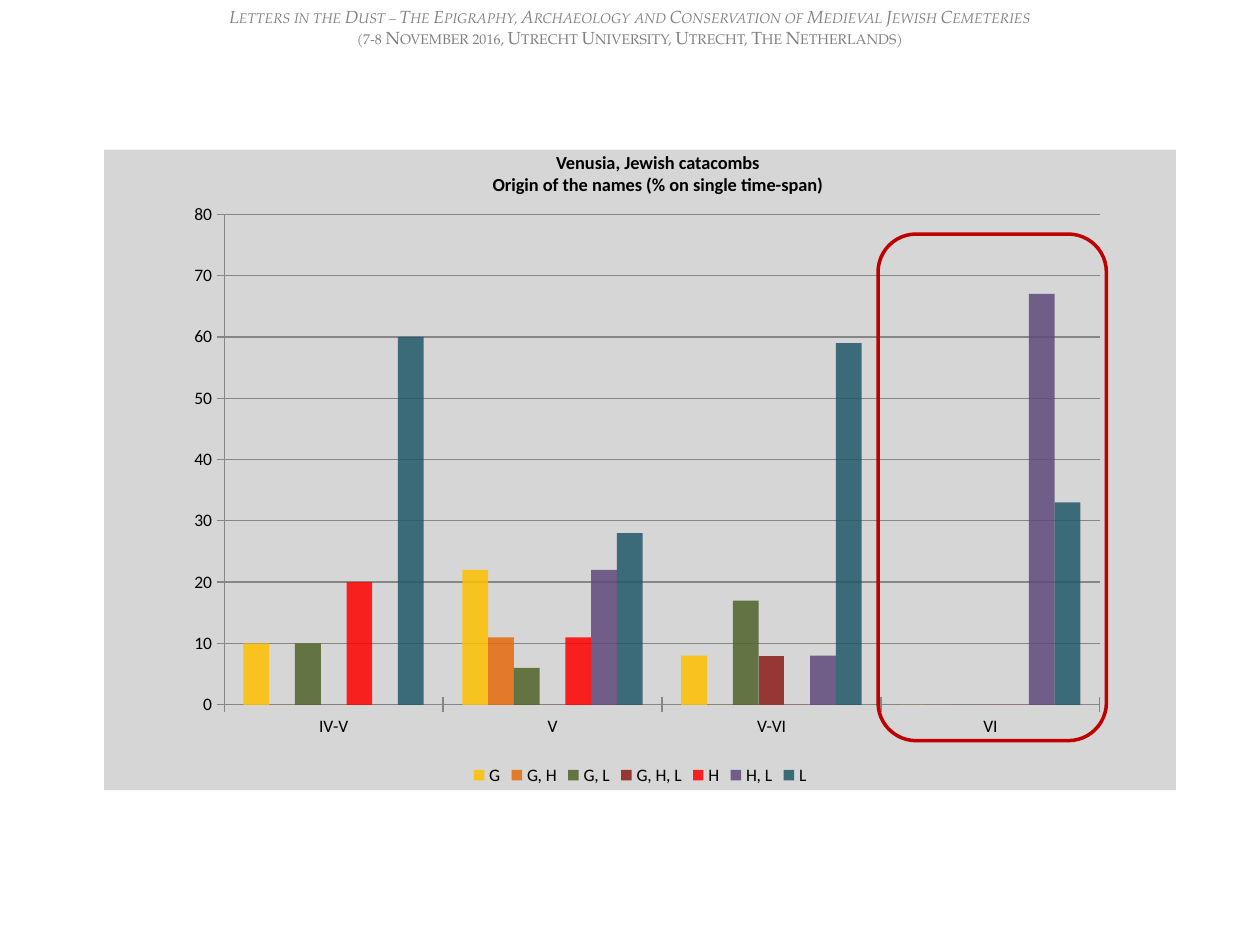
from lxml.etree import SubElement
from pptx import Presentation
from pptx.chart.data import CategoryChartData
from pptx.dml.color import RGBColor
from pptx.enum.chart import XL_CHART_TYPE, XL_LEGEND_POSITION, XL_TICK_MARK
from pptx.enum.shapes import MSO_SHAPE
from pptx.enum.text import MSO_AUTO_SIZE, PP_ALIGN
from pptx.oxml import parse_xml
from pptx.oxml.ns import nsdecls, qn
from pptx.util import Pt

# Content
HEADER = [
    ("Letters in the Dust – The Epigraphy, Archaeology and Conservation of "
     "Medieval Jewish Cemeteries", True),
    ("(7-8 November 2016, Utrecht University, Utrecht, The Netherlands)", False),
]
TITLE = [
    ("Venusia, Jewish catacombs", False),
    ("Origin of the names (% on single time-span)", False),
]
SPANS = ["IV-V", "V", "V-VI", "VI"]
ORIGINS = [  # name, values, opacity in percent
    ("G", (10, 22, 8, 0), 85),
    ("G, H", (0, 11, 0, 0), 85),
    ("G, L", (10, 6, 17, 0), 85),
    ("G, H, L", (0, 0, 8, 0), 100),
    ("H", (20, 11, 0, 0), 85),
    ("H, L", (0, 22, 8, 67), 85),
    ("L", (60, 28, 59, 33), 85),
]
COLORS = {
    "G": "FFC000", "G, H": "E46C0A", "G, L": "4F6228", "G, H, L": "953735",
    "H": "FF0000", "H, L": "604A7B", "L": "215968",
    "header": "808080", "text": "000000", "panel": "A6A6A6",
    "grid": "868686", "frame": "C00000",
}

# Places: left, top, width, height in points
BOXES = {
    "header": (0, 0, 720, 31.5),
    "chart": (59.5, 85.5, 612.5, 366),
    "title": (196, 83, 360, 34),
    "frame": (501.75, 133.75, 130.5, 289.5),
}
PLOT = {"x": 0.112, "y": 0.101, "w": 0.817, "h": 0.766}

# Formats
HEAD_FONT = {"name": "TeX Gyre Pagella", "size": Pt(10)}
TITLE_FONT = {"name": "Calibri", "size": Pt(10.5), "bold": True}
CHART_FONT = {"name": "Calibri", "size": Pt(10)}


def rgb(key):
    return RGBColor.from_string(COLORS[key])


def place(key):
    return [Pt(n) for n in BOXES[key]]


def style(font, look, color):
    for name, value in look.items():
        setattr(font, name, value)
    font.color.rgb = rgb(color)


def add_text(slide, key, lines, look, color, caps=False):
    frame = slide.shapes.add_textbox(*place(key)).text_frame
    frame.word_wrap = True
    frame.auto_size = MSO_AUTO_SIZE.SHAPE_TO_FIT_TEXT
    for i, (text, italic) in enumerate(lines):
        para = frame.add_paragraph() if i else frame.paragraphs[0]
        para.alignment = PP_ALIGN.CENTER
        run = para.add_run()
        run.text = text
        style(run.font, {**look, "italic": italic}, color)
        if caps:
            run.font._element.set("cap", "small")


def fade(fill, percent):
    color = fill._xPr.find(qn("a:solidFill"))[0]
    SubElement(color, qn("a:alpha"), val=str(percent * 1000))


def set_panel(chart, percent):
    panel = parse_xml(
        f'<c:spPr {nsdecls("c", "a")}><a:solidFill>'
        f'<a:srgbClr val="{COLORS["panel"]}"><a:alpha val="{percent * 1000}"/>'
        '</a:srgbClr></a:solidFill><a:ln><a:noFill/></a:ln></c:spPr>')
    chart._chartSpace.find(qn("c:chart")).addnext(panel)


def set_plot(chart):
    area = chart._chartSpace.find(qn("c:chart")).find(qn("c:plotArea"))
    for old in area.findall(qn("c:layout")):
        area.remove(old)
    modes = '<c:layoutTarget val="inner"/><c:xMode val="edge"/><c:yMode val="edge"/>'
    sizes = "".join(f'<c:{k} val="{v}"/>' for k, v in PLOT.items())
    area.insert(0, parse_xml(
        f'<c:layout {nsdecls("c")}><c:manualLayout>{modes}{sizes}'
        '</c:manualLayout></c:layout>'))


def add_bars(slide):
    data = CategoryChartData()
    data.categories = SPANS
    for name, values, _ in ORIGINS:
        data.add_series(name, values)
    chart = slide.shapes.add_chart(
        XL_CHART_TYPE.COLUMN_CLUSTERED, *place("chart"), data).chart
    chart.has_title = False
    style(chart.font, CHART_FONT, "text")
    set_panel(chart, 46)
    set_plot(chart)

    # Bars
    plot = chart.plots[0]
    plot.gap_width, plot.overlap, plot.vary_by_categories = 150, 0, False
    for bars, (name, _, percent) in zip(plot.series, ORIGINS):
        bars.invert_if_negative = False
        fill = bars.format.fill
        fill.solid()
        fill.fore_color.rgb = rgb(name)
        if percent < 100:
            fade(fill, percent)

    # Axes and grid
    scale = chart.value_axis
    scale.minimum_scale, scale.maximum_scale, scale.major_unit = 0, 80, 10
    scale.has_major_gridlines = True
    for axis in (chart.category_axis, scale):
        axis.major_tick_mark = XL_TICK_MARK.CROSS
        axis.minor_tick_mark = XL_TICK_MARK.NONE
    for part in (chart.category_axis, scale, scale.major_gridlines):
        part.format.line.color.rgb = rgb("grid")
        part.format.line.width = Pt(0.75)

    # Legend
    chart.has_legend = True
    chart.legend.position = XL_LEGEND_POSITION.BOTTOM
    chart.legend.include_in_layout = False


def add_frame(slide):
    shape = slide.shapes.add_shape(MSO_SHAPE.ROUNDED_RECTANGLE, *place("frame"))
    shape.shadow.inherit = False
    shape.fill.background()
    shape.line.color.rgb = rgb("frame")
    shape.line.width = Pt(2)


def main():
    deck = Presentation()
    deck.slide_width, deck.slide_height = Pt(720), Pt(540)
    slide = deck.slides.add_slide(deck.slide_layouts[6])
    add_text(slide, "header", HEADER, HEAD_FONT, "header", caps=True)
    add_bars(slide)
    add_text(slide, "title", TITLE, TITLE_FONT, "text")
    add_frame(slide)
    deck.save("out.pptx")


if __name__ == "__main__":
    main()
